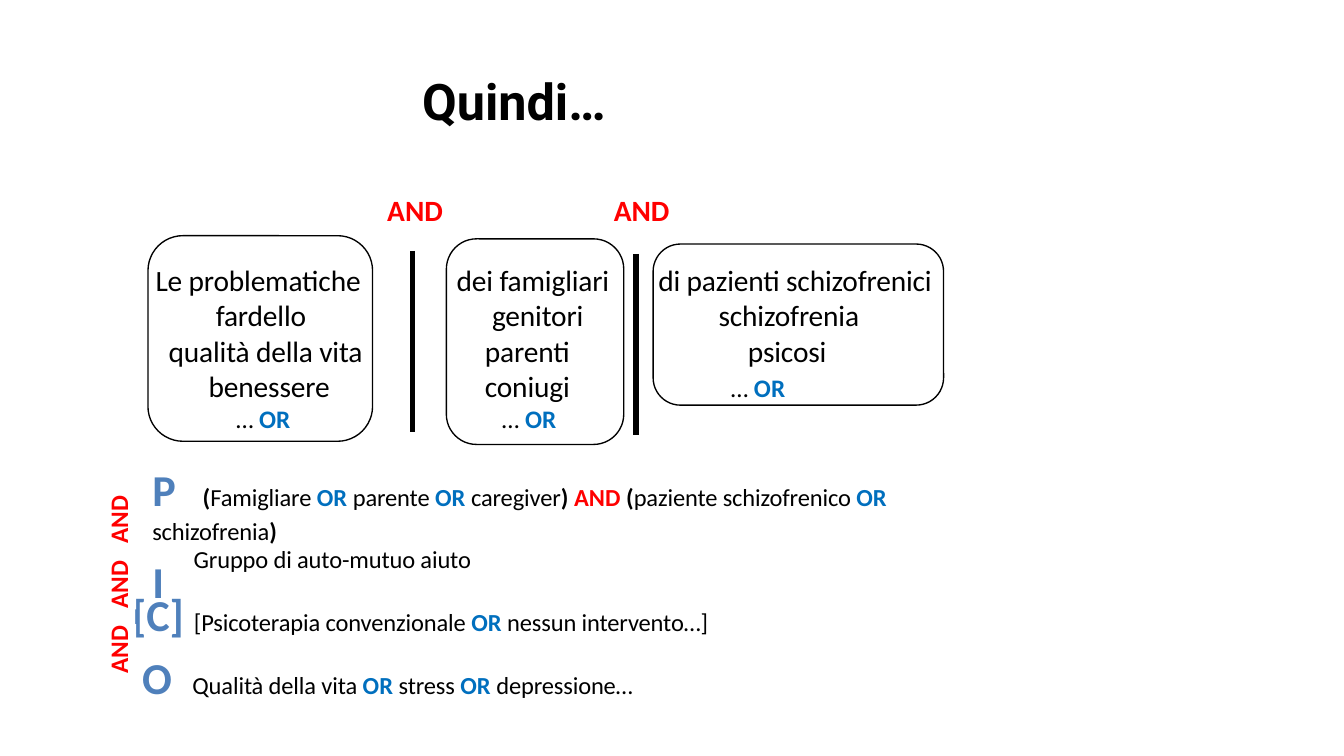
"""Build the slide that turns a question into a PICO search string."""
from lxml import etree
from pptx import Presentation
from pptx.dml.color import RGBColor
from pptx.enum.shapes import MSO_CONNECTOR, MSO_SHAPE
from pptx.enum.text import PP_ALIGN
from pptx.oxml.ns import qn
from pptx.util import Cm, Pt

ROUNDED = MSO_SHAPE.ROUNDED_RECTANGLE
STRAIGHT = MSO_CONNECTOR.STRAIGHT
CENTER = PP_ALIGN.CENTER

BLACK = RGBColor(0x00, 0x00, 0x00)
WHITE = RGBColor(0xFF, 0xFF, 0xFF)
RED = RGBColor(0xFF, 0x00, 0x00)
BLUE = RGBColor(0x00, 0x6F, 0xBE)
STEEL = RGBColor(0x4F, 0x80, 0xBB)


def style(size, color=BLACK, bold=False, name="Calibri"):
    """Return the format values of one kind of text."""
    return {"size": Pt(size), "color": color, "bold": bold, "name": name}


TITLE = style(36, bold=True, name="Roboto")
LETTER = style(31.5, STEEL, True)
TERM = style(17.5)
BRACKET = style(17.5, bold=True)
TERM_OR = style(17.5, BLUE, True)
TERM_AND = style(17.5, RED, True)
CARD = style(21)
CARD_DOTS = style(18)
CARD_OR = style(18, BLUE, True)
TOP_AND = style(21, RED, True)
SIDE_AND = style(18, RED, True)

CARDS = [
    ((3.73, 5.94, 5.66, 5.18), 3.84, 0,
     [("Le problematiche", 0.08), ("fardello", 1.6),
      ("qualità della vita", 0.41), ("benessere", 1.42)], 2.11),
    ((11.25, 6.02, 4.47, 5.18), 11.46, 0,
     [("dei famigliari", 0.05), ("genitori", 0.94),
      ("parenti", 0.76), ("coniugi", 0.76)], 1.19),
    ((16.46, 6.15, 7.32, 4.06), 16.54, 3,
     [("di pazienti schizofrenici", 0.05), ("schizofrenia", 1.57),
      ("psicosi", 2.31)], 1.88),
]
DIVIDERS = [(10.39, 6.32), (16.03, 6.4)]
TOP_AND_LEFTS = [9.73, 15.44]

POPULATION = [
    ("P\t", LETTER), ("(", BRACKET), ("Famigliare ", TERM), ("OR ", TERM_OR),
    ("parente ", TERM), ("OR ", TERM_OR), ("caregiver", TERM), (") ", BRACKET),
    ("AND ", TERM_AND), ("(", BRACKET), ("paziente schizofrenico ", TERM),
    ("OR ", TERM_OR), ("schizofrenia", TERM), (")", BRACKET)]
INTERVENTION = [("I", LETTER)]
GROUP = [("Gruppo di auto-mutuo aiuto", TERM)]
COMPARISON = [
    ("[C] ", LETTER), ("[Psicoterapia convenzionale ", TERM),
    ("OR ", TERM_OR), ("nessun intervento…]", TERM)]
OUTCOME = [
    ("O\t", LETTER), ("Qualità della vita ", TERM), ("OR ", TERM_OR),
    ("stress ", TERM), ("OR ", TERM_OR), ("depressione…", TERM)]


def add_box(page, left, top, width, height, inset=0.03):
    """Add a wrapping text box with only a top inset."""
    box = page.shapes.add_textbox(Cm(left), Cm(top), Cm(width), Cm(height))
    frame = box.text_frame
    frame.word_wrap = True
    frame.margin_left = frame.margin_right = frame.margin_bottom = 0
    frame.margin_top = Cm(inset)
    return box


def add_line(box, runs, indent=0.03, before=0, tab=None):
    """Write one paragraph of styled runs and return it."""
    frame = box.text_frame
    para = frame.paragraphs[0]
    if para.runs:
        para = frame.add_paragraph()
        para.space_before = Pt(before)
    properties = para._p.get_or_add_pPr()
    properties.set("marL", str(Cm(indent)))
    properties.set("indent", "0")
    if tab:
        tabs = etree.SubElement(properties, qn("a:tabLst"))
        etree.SubElement(tabs, qn("a:tab"), pos=str(Cm(tab)), algn="l")
    for text, values in runs:
        span = para.add_run()
        span.text = text
        for key, value in values.items():
            if key == "color":
                span.font.color.rgb = value
            else:
                setattr(span.font, key, value)
        if values in (TERM, CARD):
            span._r.get_or_add_rPr().set("spc", "-10")
    return para


def add_card(page, outline, text_left, before, lines, or_indent):
    """Add a rounded outline with its synonyms and closing OR."""
    left, top, width, height = map(Cm, outline)
    card = page.shapes.add_shape(ROUNDED, left, top, width, height)
    card.shadow.inherit = False
    card.adjustments[0] = 0.17
    card.fill.background()
    card.line.color.rgb = BLACK
    card.line.width = Pt(0.96)
    box = add_box(page, text_left, 6.58, outline[2], 4.4)
    for text, indent in lines:
        add_line(box, [(text, CARD)], indent)
    add_line(box, [("… ", CARD_DOTS), ("OR", CARD_OR)], or_indent, before)


def add_divider(page, left, top):
    """Add a thick vertical line between two cards."""
    line = page.shapes.add_connector(
        STRAIGHT, Cm(left), Cm(top), Cm(left), Cm(top + 4.57))
    line.line.color.rgb = BLACK
    line.line.width = Pt(3.72)
    etree.SubElement(line._element.spPr, qn("a:effectLst"))


def add_side_and(page, top):
    """Add an AND that reads upwards on a white ground."""
    box = add_box(page, 2.72, top, 0.71, 1.27, inset=0)
    box.fill.solid()
    box.fill.fore_color.rgb = WHITE
    box.text_frame._txBody.bodyPr.set("vert", "vert270")
    add_line(box, [("AND", SIDE_AND)]).line_spacing = Pt(18.1)


def add_pico(page):
    """Add the four PICO rows and the operators that join them."""
    box = add_box(page, 3.81, 11.38, 21.79, 3.23, inset=0.28)
    add_line(box, POPULATION, tab=1.12)
    add_line(box, INTERVENTION, before=7)
    add_line(add_box(page, 4.85, 13.69, 7.14, 0.81), GROUP)
    box = add_box(page, 3.3, 14.53, 14.73, 3.23, inset=0.28)
    add_line(box, COMPARISON)
    add_line(box, OUTCOME, 0.28, 7, tab=1.47)
    for row in range(3):
        add_side_and(page, 12.45 + 1.64 * row)


def main():
    """Build and save the deck."""
    deck = Presentation()
    deck.slide_width, deck.slide_height = Cm(33.87), Cm(19.05)
    page = deck.slides.add_slide(deck.slide_layouts[6])
    title = add_box(page, -0.25, 1.63, 26.37, 1.8, inset=0.13)
    add_line(title, [("Quindi…", TITLE)]).alignment = CENTER
    add_pico(page)
    for left in TOP_AND_LEFTS:
        add_line(add_box(page, left, 4.8, 1.47, 0.97), [("AND", TOP_AND)])
    for card in CARDS:
        add_card(page, *card)
    for left, top in DIVIDERS:
        add_divider(page, left, top)
    deck.save("out.pptx")


if __name__ == "__main__":
    main()
